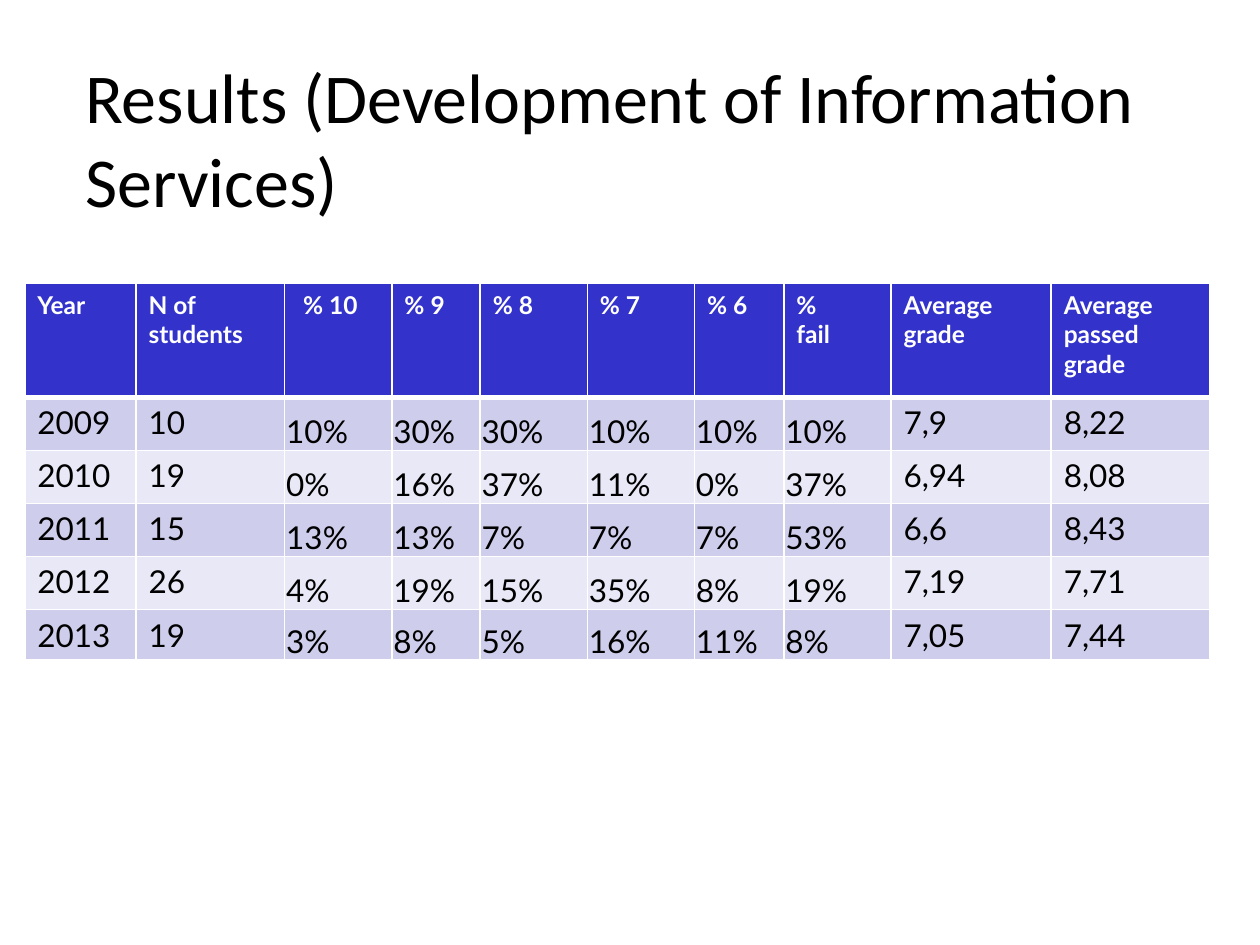
from dataclasses import dataclass

from lxml.etree import SubElement
from pptx import Presentation
from pptx.dml.color import RGBColor as RGB
from pptx.enum.text import MSO_ANCHOR as Anchor
from pptx.oxml.ns import qn
from pptx.util import Cm, Pt


@dataclass(frozen=True)
class Theme:
    black: RGB = RGB(0x00, 0x00, 0x00)
    white: RGB = RGB(0xFF, 0xFF, 0xFF)
    header: RGB = RGB(0x33, 0x33, 0xCC)
    bands: tuple = (RGB(0xCE, 0xCE, 0xEC), RGB(0xE8, 0xE8, 0xF6))
    title_font: str = "Calibri"
    table_font: str = "Lato"
    title_size: Pt = Pt(40)
    header_size: Pt = Pt(14)
    body_size: Pt = Pt(18)
    thin: Pt = Pt(1)
    thick: Pt = Pt(3)


theme = Theme()


def add_border(cell, side, width):
    line = SubElement(cell._tc.get_or_add_tcPr(), qn(f"a:ln{side}"), w=str(width))
    fill = SubElement(line, qn("a:solidFill"))
    SubElement(fill, qn("a:srgbClr"), val=str(theme.white))


def set_font(paragraph, name, size, color, bold=False):
    font = paragraph.font
    font.name, font.size, font.bold = name, size, bold
    font.color.rgb = color


prs = Presentation()
prs.slide_width, prs.slide_height = Cm(25.4), Cm(19.05)
slide = prs.slides.add_slide(prs.slide_layouts[6])

# Title
title = slide.shapes.add_textbox(Cm(1.47), Cm(1.32), Cm(22.66), Cm(2.92)).text_frame
title.word_wrap = True
title.vertical_anchor = Anchor.MIDDLE
title.text = "Results (Development of Information Services)"
set_font(title.paragraphs[0], theme.title_font, theme.title_size, theme.black)

# Results by year; \v is a line break within a heading
results = [
    ["Year", "N of\vstudents", "% 10", "% 9", "% 8", "% 7", "% 6", "%\vfail",
     "Average grade", "Average passed\vgrade"],
    ["2009", "10", "10%", "30%", "30%", "10%", "10%", "10%", "7,9", "8,22"],
    ["2010", "19", "0%", "16%", "37%", "11%", "0%", "37%", "6,94", "8,08"],
    ["2011", "15", "13%", "13%", "7%", "7%", "7%", "53%", "6,6", "8,43"],
    ["2012", "26", "4%", "19%", "15%", "35%", "8%", "19%", "7,19", "7,71"],
    ["2013", "19", "3%", "8%", "5%", "16%", "11%", "8%", "7,05", "7,44"],
]
column_widths = [2.24, 3, 2.16, 1.78, 2.16, 2.16, 1.8, 2.16, 3.23, 3.2]
row_heights = [2.29, 1.07, 1.07, 1.07, 1.07, 0.89]
percent_columns = range(2, 8)

# Table grid
table = slide.shapes.add_table(
    len(results), len(column_widths), Cm(0.5), Cm(5.72),
    Cm(sum(column_widths)), Cm(sum(row_heights))).table
for column, width in zip(table.columns, column_widths):
    column.width = Cm(width)
for row, height in zip(table.rows, row_heights):
    row.height = Cm(height)

# Table cells
for r, values in enumerate(results):
    is_header = r == 0
    for c, value in enumerate(values):
        cell = table.cell(r, c)
        cell.text = value
        for side in "LRTB":
            under_header = (r, side) in ((0, "B"), (1, "T"))
            add_border(cell, side, theme.thick if under_header else theme.thin)
        cell.fill.solid()
        paragraph = cell.text_frame.paragraphs[0]
        if is_header:
            cell.fill.fore_color.rgb = theme.header
            set_font(paragraph, theme.table_font, theme.header_size, theme.white, True)
        else:
            cell.fill.fore_color.rgb = theme.bands[(r - 1) % 2]
            set_font(paragraph, theme.table_font, theme.body_size, theme.black)
            if c in percent_columns:
                cell.vertical_anchor = Anchor.BOTTOM
                cell.margin_left = cell.margin_right = cell.margin_top = Cm(0.03)
                cell.margin_bottom = 0

# The first percentage heading sits slightly further in
table.cell(0, 2).margin_left = Cm(0.37)

prs.save("out.pptx")
